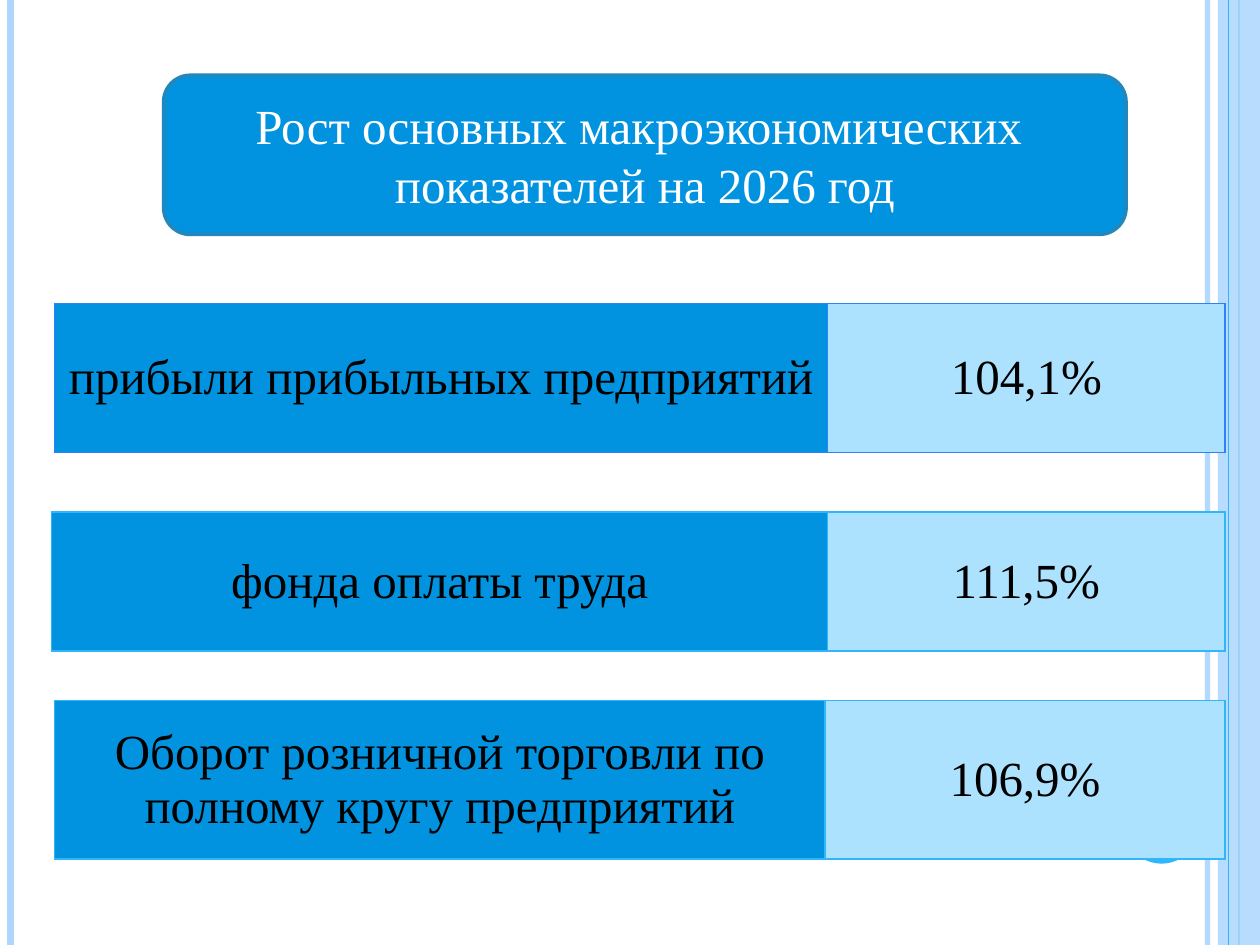
from dataclasses import dataclass

import pptx
import pptx.dml.color
import pptx.enum.shapes
import pptx.enum.text
import pptx.oxml.ns
import pptx.util
from lxml import etree

Pt = pptx.util.Pt
qn = pptx.oxml.ns.qn
KIND = pptx.enum.shapes.MSO_SHAPE
MIDDLE = pptx.enum.text.MSO_ANCHOR.MIDDLE
CENTER = pptx.enum.text.PP_ALIGN.CENTER
FONT, SIZE = "Times New Roman", 28
DEEP, LIGHT, PALE = "0293E0", "ADE2FE", "AED7FE"
SKY, ROYAL = "31B6FD", "2D83F4"
WIDE, HIGH = 720, 540
EDGE = 700


@dataclass
class Stripe:
    x: float
    color: str
    width: float
    alpha: int = 100


@dataclass
class Row:
    label: str
    value: str
    left: float
    top: float
    high: float
    split: float
    border: str = SKY


STRIPES = [
    Stripe(690, PALE, 3, 93),
    Stripe(6, PALE, 4.5),
    Stripe(708, "9FCFFB", 0.75),
]
RIM = Stripe(702, SKY, 0.75)
ROWS = [
    Row("прибыли прибыльных предприятий", "104,1%",
        31, 173.5, 85, 473, ROYAL),
    Row("фонда оплаты труда", "111,5%", 29.5, 292.5, 79.5, 473),
    Row("Оборот розничной торговли по полному кругу предприятий",
        "106,9%", 31, 400.25, 90.75, 471.5),
]


def rgb(code: str) -> pptx.dml.color.RGBColor:
    return pptx.dml.color.RGBColor.from_string(code)


def fade(fill, alpha: int) -> None:
    """Set the opacity of a solid fill element in percent."""
    tone = fill.find(qn("a:srgbClr"))
    etree.SubElement(tone, qn("a:alpha"), val=str(alpha * 1000))


def draw_stripe(slide, stripe: Stripe) -> None:
    line = slide.shapes.add_connector(
        pptx.enum.shapes.MSO_CONNECTOR.STRAIGHT,
        Pt(stripe.x), Pt(0), Pt(stripe.x), Pt(HIGH))
    line.line.color.rgb = rgb(stripe.color)
    line.line.width = Pt(stripe.width)
    props = line._element.spPr
    if stripe.alpha < 100:
        fade(props.find(qn("a:ln")).find(qn("a:solidFill")), stripe.alpha)
    etree.SubElement(props, qn("a:effectLst"))


def draw_shape(slide, kind, left: float, top: float, wide: float,
               high: float, color: str):
    shape = slide.shapes.add_shape(kind, Pt(left), Pt(top), Pt(wide), Pt(high))
    shape.shadow.inherit = False
    shape.fill.solid()
    shape.fill.fore_color.rgb = rgb(color)
    shape.line.fill.background()
    return shape


def set_text(frame, text: str, color: str) -> None:
    frame.text = text
    frame.word_wrap = True
    for para in frame.paragraphs:
        para.alignment = CENTER
        for run in para.runs:
            run.font.name = FONT
            run.font.size = Pt(SIZE)
            run.font.color.rgb = rgb(color)


def set_edges(cell, color: str) -> None:
    """Draw a thin border on all four sides; call before filling the cell."""
    props = cell._tc.get_or_add_tcPr()
    for side in ("a:lnL", "a:lnR", "a:lnT", "a:lnB"):
        line = etree.SubElement(props, qn(side), w=str(Pt(1)))
        fill = etree.SubElement(line, qn("a:solidFill"))
        etree.SubElement(fill, qn("a:srgbClr"), val=color)


def draw_row(slide, row: Row) -> None:
    table = slide.shapes.add_table(
        1, 2, Pt(row.left), Pt(row.top),
        Pt(EDGE - row.left), Pt(row.high)).table
    table.first_row = table.horz_banding = False
    table.columns[0].width = Pt(row.split - row.left)
    table.columns[1].width = Pt(EDGE - row.split)
    pairs = ((row.label, DEEP), (row.value, LIGHT))
    for col, (text, color) in enumerate(pairs):
        cell = table.cell(0, col)
        set_edges(cell, row.border)
        cell.fill.solid()
        cell.fill.fore_color.rgb = rgb(color)
        cell.vertical_anchor = MIDDLE
        set_text(cell.text_frame, text, "000000")


def draw_title(slide) -> None:
    box = draw_shape(slide, KIND.ROUNDED_RECTANGLE, 93.5, 43, 550, 91, DEEP)
    box.line.color.rgb = rgb("2487BB")
    box.line.width = Pt(2)
    box.text_frame.vertical_anchor = MIDDLE
    set_text(box.text_frame, "Рост основных макроэкономических \n"
             "показателей на 2026 год", "FFFFFF")


def main() -> None:
    deck = pptx.Presentation()
    deck.slide_width, deck.slide_height = Pt(WIDE), Pt(HIGH)
    slide = deck.slides.add_slide(deck.slide_layouts[6])
    band = draw_shape(slide, KIND.RECTANGLE, 696, 0, 24, HIGH, PALE)
    fade(band._element.spPr.find(qn("a:solidFill")), 87)
    for stripe in (*STRIPES, RIM):
        draw_stripe(slide, stripe)
    draw_shape(slide, KIND.OVAL, 642, 450, 43.5, 43.5, SKY)
    draw_title(slide)
    for row in ROWS:
        draw_row(slide, row)
    deck.save("out.pptx")


if __name__ == "__main__":
    main()
